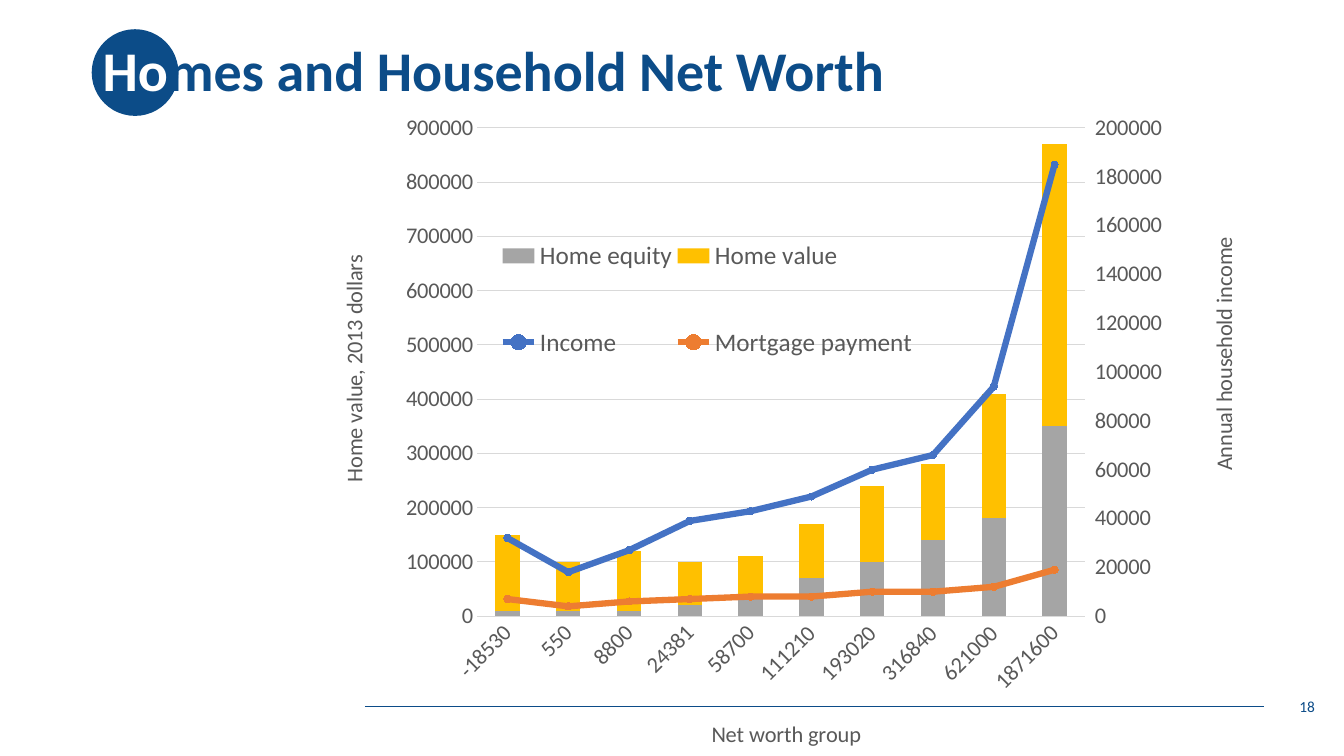
from copy import deepcopy

from lxml import etree
from pptx import Presentation
from pptx.chart.axis import CategoryAxis, ValueAxis
from pptx.chart.data import CategoryChartData
from pptx.dml.color import RGBColor
from pptx.enum.chart import XL_CHART_TYPE, XL_LEGEND_POSITION, XL_MARKER_STYLE, XL_TICK_MARK
from pptx.enum.shapes import MSO_CONNECTOR, MSO_SHAPE
from pptx.enum.text import MSO_ANCHOR, PP_ALIGN
from pptx.oxml import parse_xml
from pptx.oxml.ns import nsdecls, qn
from pptx.util import Inches, Pt

NAVY = RGBColor(0x0C, 0x4C, 0x88)
WHITE = RGBColor(0xFF, 0xFF, 0xFF)
BLACK = RGBColor(0x00, 0x00, 0x00)
TEXT_GRAY = RGBColor(0x59, 0x59, 0x59)
GRID_GRAY = RGBColor(0xD9, 0xD9, 0xD9)
GRAY = RGBColor(0xA5, 0xA5, 0xA5)
GOLD = RGBColor(0xFF, 0xC0, 0x00)
BLUE = RGBColor(0x44, 0x72, 0xC4)
ORANGE = RGBColor(0xED, 0x7D, 0x31)

STACKED = XL_CHART_TYPE.COLUMN_STACKED
LEGEND_BOTTOM = XL_LEGEND_POSITION.BOTTOM
CIRCLE_MARKER = XL_MARKER_STYLE.CIRCLE
TICK_NONE, TICK_OUT = XL_TICK_MARK.NONE, XL_TICK_MARK.OUTSIDE
STRAIGHT, OVAL = MSO_CONNECTOR.STRAIGHT, MSO_SHAPE.OVAL
MIDDLE = MSO_ANCHOR.MIDDLE
LEFT, RIGHT = PP_ALIGN.LEFT, PP_ALIGN.RIGHT

GROUPS = ["-18530", "550", "8800", "24381", "58700",
          "111210", "193020", "316840", "621000", "1871600"]
SERIES = [
    ("Home equity", GRAY, [10000, 10000, 10000, 20000, 40000,
                           70000, 100000, 140000, 180000, 350000]),
    ("Home value", GOLD, [140000, 90000, 110000, 80000, 70000,
                          100000, 140000, 140000, 230000, 520000]),
    ("Income", BLUE, [32000, 18000, 27000, 39000, 43000,
                      49000, 60000, 66000, 94000, 185000]),
    ("Mortgage payment", ORANGE, [7000, 4000, 6000, 7000, 8000,
                                  8000, 10000, 10000, 12000, 19000]),
]
BAR_COUNT = 2


class SlideBuilder:
    font = "Calibri"

    def __init__(self, slide):
        self.s = slide

    def set_font(self, font, size, color, bold=False):
        values = {"name": self.font, "size": Pt(size), "bold": bold}
        for key, value in values.items():
            setattr(font, key, value)
        font.color.rgb = color

    def rule(self, x1, y1, x2, y2, color, width):
        sp = self.s.shapes.add_connector(
            STRAIGHT, Inches(x1), Inches(y1), Inches(x2), Inches(y2))
        sp.line.color.rgb = color
        sp.line.width = Pt(width)
        etree.SubElement(sp._element.spPr, qn("a:effectLst"))

    def circle(self, x, y, size, color):
        sp = self.s.shapes.add_shape(
            OVAL, Inches(x), Inches(y), Inches(size), Inches(size))
        sp.shadow.inherit = False
        sp.fill.solid()
        sp.fill.fore_color.rgb = color
        sp.line.fill.background()

    def text(self, x, y, w, h, runs, size, align=LEFT, bold=False, spacing=None):
        sp = self.s.shapes.add_textbox(Inches(x), Inches(y), Inches(w), Inches(h))
        tf = sp.text_frame
        tf.word_wrap = True
        tf.vertical_anchor = MIDDLE
        p = tf.paragraphs[0]
        p.alignment = align
        p.line_spacing = spacing
        for words, color in runs:
            r = p.add_run()
            r.text = words
            self.set_font(r.font, size, color, bold)

    def layout(self, parent, x, y, w=None, h=None, inner=False):
        for old in parent.findall(qn("c:layout")):
            parent.remove(old)
        target = '<c:layoutTarget val="inner"/>' if inner else ""
        sizes = {"x": x, "y": y, "w": w, "h": h}
        modes = '<c:xMode val="edge"/><c:yMode val="edge"/>'
        places = "".join(f'<c:{k} val="{v}"/>' for k, v in sizes.items() if v is not None)
        return parse_xml(f'<c:layout {nsdecls("c")}><c:manualLayout>{target}{modes}'
                         f'{places}</c:manualLayout></c:layout>')

    def axis_title(self, axis, words, x, y):
        title = axis.axis_title
        tf = title.text_frame
        r = tf.paragraphs[0].add_run()
        r.text = words
        self.set_font(r.font, 16, TEXT_GRAY)
        if isinstance(axis, ValueAxis):
            body = tf._txBody.find(qn("a:bodyPr"))
            body.set("rot", "-5400000")
            body.set("vert", "horz")
        element = title._element
        placement = self.layout(element, x, y)
        element.find(qn("c:tx")).addnext(placement)

    def style_axis(self, axis, tick):
        values = {"major_tick_mark": tick, "minor_tick_mark": TICK_NONE,
                  "has_major_gridlines": False}
        for key, value in values.items():
            setattr(axis, key, value)
        self.set_font(axis.tick_labels.font, 16, TEXT_GRAY)
        axis.format.line.fill.background()

    def scale(self, axis, top, step):
        values = {"minimum_scale": 0, "maximum_scale": top, "major_unit": step}
        for key, value in values.items():
            setattr(axis, key, value)

    def add_right_axis(self, chart):
        plot_area = chart._chartSpace.chart.plotArea
        bars = plot_area.find(qn("c:barChart"))
        lines = parse_xml(
            f'<c:lineChart {nsdecls("c")}><c:grouping val="standard"/>'
            '<c:varyColors val="0"/><c:marker val="1"/>'
            '<c:axId val="5001"/><c:axId val="5002"/></c:lineChart>')
        marker = lines.find(qn("c:marker"))
        for ser in bars.findall(qn("c:ser"))[BAR_COUNT:]:
            for flag in ser.findall(qn("c:invertIfNegative")):
                ser.remove(flag)
            marker.addprevious(ser)
        bars.addnext(lines)

        cat_ax = deepcopy(plot_area.find(qn("c:catAx")))
        val_ax = deepcopy(plot_area.find(qn("c:valAx")))
        plot_area.find(qn("c:valAx")).addnext(val_ax)
        val_ax.addnext(cat_ax)
        for ax, own, other in ((cat_ax, "5001", "5002"), (val_ax, "5002", "5001")):
            ax.find(qn("c:axId")).set("val", own)
            ax.find(qn("c:crossAx")).set("val", other)
        val_ax.find(qn("c:axPos")).set("val", "r")
        val_ax.find(qn("c:crosses")).set("val", "max")
        CategoryAxis(cat_ax).visible = False
        placement = self.layout(plot_area, 0.169, 0.083, 0.636, 0.705, True)
        plot_area.insert(0, placement)
        return ValueAxis(val_ax)

    def chart(self, x, y, w, h):
        data = CategoryChartData()
        data.categories = GROUPS
        for name, _, values in SERIES:
            data.add_series(name, values)
        chart = self.s.shapes.add_chart(
            STACKED, Inches(x), Inches(y), Inches(w), Inches(h), data).chart
        self.set_font(chart.font, 10, BLACK)
        chart.has_title = False

        left, bottom = chart.value_axis, chart.category_axis
        right = self.add_right_axis(chart)
        for axis, tick in ((left, TICK_NONE), (bottom, TICK_NONE), (right, TICK_OUT)):
            self.style_axis(axis, tick)
        self.scale(left, 900000, 100000)
        self.scale(right, 200000, 20000)
        left.has_major_gridlines = True
        for line in (left.major_gridlines.format.line, bottom.format.line):
            line.color.rgb = GRID_GRAY
            line.width = Pt(0.75)
        bottom._element.find(qn("c:txPr")).find(qn("a:bodyPr")).set("rot", "-2700000")
        self.axis_title(left, "Home value, 2013 dollars", 0.02, 0.26)
        self.axis_title(right, "Annual household income", 0.93, 0.235)
        self.axis_title(bottom, "Net worth group", 0.41, 0.93)

        bars, lines = chart.plots
        for key, value in {"gap_width": 150, "overlap": 100, "vary_by_categories": False}.items():
            setattr(bars, key, value)
        for ser, (_, color, _) in zip(bars.series, SERIES):
            ser.format.fill.solid()
            ser.format.fill.fore_color.rgb = color
        for ser, (_, color, _) in zip(lines.series, SERIES[BAR_COUNT:]):
            ser.smooth = False
            ser.format.line.color.rgb = color
            ser.format.line.width = Pt(4.5)
            ser.marker.style = CIRCLE_MARKER
            ser.marker.size = 5
            ser.marker.format.fill.solid()
            ser.marker.format.fill.fore_color.rgb = color
            ser.marker.format.line.color.rgb = color

        chart.has_legend = True
        legend = chart.legend
        legend.position = LEGEND_BOTTOM
        legend.include_in_layout = False
        self.set_font(legend.font, 18, TEXT_GRAY)
        element = legend._element
        element.find(qn("c:legendPos")).addnext(self.layout(element, 0.19, 0.165, 0.44, 0.33))


def main():
    prs = Presentation()
    prs.slide_width, prs.slide_height = Inches(13.33), Inches(7.5)
    b = SlideBuilder(prs.slides.add_slide(prs.slide_layouts[6]))
    b.rule(3.62, 7.01, 12.54, 7.01, NAVY, 0.5)
    b.circle(0.91, 0.29, 0.86, NAVY)
    b.text(0.92, 0, 11.5, 1.45,
           [("Ho", WHITE), ("mes and Household Net Worth", NAVY)], 40, bold=True, spacing=0.9)
    b.text(10.14, 6.81, 3, 0.4, [("18", NAVY)], 11, align=RIGHT)
    b.chart(3.13, 0.7, 9.48, 6.87)
    prs.save("out.pptx")


if __name__ == "__main__":
    main()
